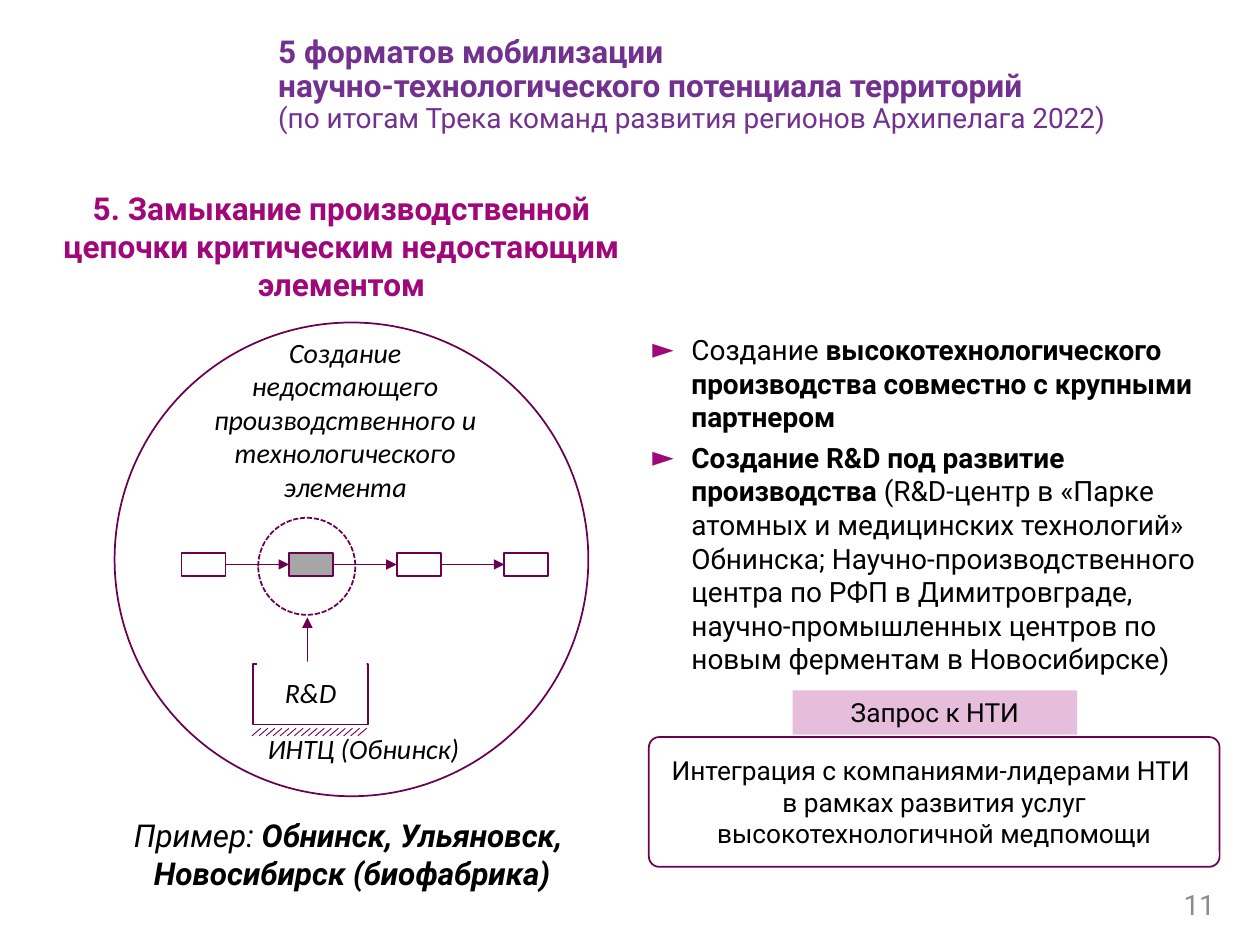
from lxml.etree import SubElement
from pptx import Presentation
from pptx.dml.color import RGBColor
from pptx.enum.dml import MSO_LINE
from pptx.enum.shapes import MSO_CONNECTOR, MSO_SHAPE
from pptx.enum.text import MSO_ANCHOR, PP_ALIGN
from pptx.oxml.ns import qn
from pptx.util import Inches, Pt

COLORS = {"ink": "000000", "line": "6C0050", "pink": "A00778", "head": "72318F",
          "grey": "A6A6A6", "page": "8C8C8C", "white": "FFFFFF"}
ALIGN = {"l": PP_ALIGN.LEFT, "c": PP_ALIGN.CENTER, "r": PP_ALIGN.RIGHT}

TITLE = [[("5 форматов мобилизации \nнаучно-технологического потенциала территорий\n", True, 18),
          ("(по итогам Трека команд развития регионов Архипелага 2022)", False, 16)]]
FORMAT = "5. Замыкание производственной цепочки критическим недостающим элементом"
EXAMPLE = [[("Пример: ", False), ("Обнинск, Ульяновск, \nНовосибирск (биофабрика)", True)]]
POINTS = [
    [("Создание ", False),
     ("высокотехнологического производства совместно с крупными партнером", True)],
    [("Создание R&D под развитие производства ", True),
     ("(R&D-центр в «Парке атомных и медицинских технологий» Обнинска; "
      "Научно-производственного центра по РФП в Димитровграде, "
      "научно-промышленных центров по новым ферментам в Новосибирске)", False)],
]
REQUEST = "Запрос к НТИ"
ANSWER = ("Интеграция с компаниями-лидерами НТИ \n"
          "в рамках развития услуг высокотехнологичной медпомощи")
LABELS = [
    ("R&D", (2.01, 5.31, 0.91, 0.37)),
    ("ИНТЦ (Обнинск)", (2, 5.76, 1.77, 0.37)),
    ("Создание недостающего производственного и технологического элемента",
     (1.47, 2.61, 2.54, 1.45)),
]
CHAIN = [None, "grey", "white", None]
CHAIN_LEFT, CHAIN_TOP, CHAIN_STEP = 1.44, 4.39, 0.854
HATCH_COUNT, HATCH_LEFT, HATCH_STEP = 16, 2.07, 0.056

deck = Presentation()
deck.slide_width, deck.slide_height = Inches(10), Inches(7.5)
slide = deck.slides.add_slide(deck.slide_layouts[6])


def color(name):
    return RGBColor.from_string(COLORS[name])


def bullet(para):
    props = para._p.get_or_add_pPr()
    props.set("marL", str(Inches(0.31)))
    props.set("indent", str(Inches(-0.31)))
    tint = SubElement(props, qn("a:buClr"))
    SubElement(tint, qn("a:srgbClr"), val=COLORS["pink"])
    SubElement(props, qn("a:buFont"), typeface="Roboto")
    SubElement(props, qn("a:buChar"), char="►")
    tabs = SubElement(props, qn("a:tabLst"))
    SubElement(tabs, qn("a:tab"), pos=str(Inches(0.59)), algn="l")


def write(text, box=None, shape=None, size=16, font="Roboto", ink="ink", bold=False,
          italic=False, align="c", middle=False, spacing=None, bullets=False, inset=None):
    shape = shape or slide.shapes.add_textbox(*map(Inches, box))
    frame = shape.text_frame
    frame.word_wrap = True
    frame.vertical_anchor = MSO_ANCHOR.MIDDLE if middle else MSO_ANCHOR.TOP
    if inset is not None:
        frame.margin_left = frame.margin_right = Inches(inset)
    paras = [[(text, bold)]] if isinstance(text, str) else text
    for index, parts in enumerate(paras):
        para = frame.add_paragraph() if index else frame.paragraphs[0]
        if bullets:
            bullet(para)
            para.space_after = Pt(2)
            if index:
                para.space_before = Pt(2)
        para.alignment = ALIGN[align]
        if spacing:
            para.line_spacing = spacing
        for words, heavy, *own in parts:
            for row, piece in enumerate(words.split("\n")):
                if row:
                    para.add_line_break()
                if not piece:
                    continue
                run = para.add_run()
                run.text = piece
                run.font.name = font
                run.font.size = Pt(own[0] if own else size)
                run.font.bold, run.font.italic = heavy, italic
                run.font.color.rgb = color(ink)


def draw(kind, box, fill=None, line="line", dash=None):
    shape = slide.shapes.add_shape(kind, *map(Inches, box))
    shape.shadow.inherit = False
    if fill:
        shape.fill.solid()
        shape.fill.fore_color.rgb = color(fill)
    else:
        shape.fill.background()
    if line:
        shape.line.color.rgb = color(line)
        shape.line.width = Pt(1)
        if dash:
            shape.line.dash_style = dash
    else:
        shape.line.fill.background()
    return shape


def link(start, end, arrow=False):
    wire = slide.shapes.add_connector(MSO_CONNECTOR.STRAIGHT, *map(Inches, start + end))
    wire.line.color.rgb = color("line")
    wire.line.width = Pt(0.5)
    if arrow:
        SubElement(wire.line._get_or_add_ln(), qn("a:tailEnd"), type="triangle")
    SubElement(wire._element.spPr, qn("a:effectLst"))
    return wire


write(EXAMPLE, (0.66, 6.43, 4.27, 0.71), size=18, italic=True)

draw(MSO_SHAPE.RECTANGLE, (2.01, 5.27, 0.91, 0.48), fill="white")
draw(MSO_SHAPE.OVAL, (0.91, 2.56, 3.76, 3.76))
links = [draw(MSO_SHAPE.RECTANGLE, (CHAIN_LEFT + i * CHAIN_STEP, CHAIN_TOP, 0.35, 0.18), fill=fill)
         for i, fill in enumerate(CHAIN)]
for left, right in zip(links, links[1:]):
    wire = link((0, 0), (1, 1), arrow=True)
    wire.begin_connect(left, 3)
    wire.end_connect(right, 1)
draw(MSO_SHAPE.OVAL, (2.05, 4.11, 0.77, 0.77), dash=MSO_LINE.SQUARE_DOT)
link((2.44, 5.37), (2.44, 4.9), arrow=True)
draw(MSO_SHAPE.RECTANGLE, (2.04, 5.25, 0.87, 0.48), fill="white", line=None)
for i in range(HATCH_COUNT):
    x = HATCH_LEFT + i * HATCH_STEP
    link((x, 5.78), (x - 0.07, 5.84))
for text, box in LABELS:
    write(text, box, font="Calibri", italic=True)

write("11", (7.49, 6.98, 2.25, 0.4), ink="page", align="r", middle=True)
write(POINTS, (5.08, 2.59, 4.66, 2.85), align="l", bullets=True)
write(TITLE, (2.11, 0.16, 7.63, 1.03), ink="head", align="l", middle=True, spacing=0.9)
write(FORMAT, (0.38, 1.45, 4.66, 1.01), size=18, ink="pink", bold=True)

band = draw(MSO_SHAPE.RECTANGLE, (6.29, 5.48, 2.26, 0.35), fill="pink", line=None)
tint = band._element.spPr.find(qn("a:solidFill")).find(qn("a:srgbClr"))
SubElement(tint, qn("a:alpha"), val="26000")
write(REQUEST, shape=band, size=15)
panel = draw(MSO_SHAPE.ROUNDED_RECTANGLE, (5.15, 5.85, 4.53, 1.03))
panel.adjustments[0] = 0.08
write(ANSWER, shape=panel, size=15, middle=True, inset=0)

deck.save("out.pptx")
